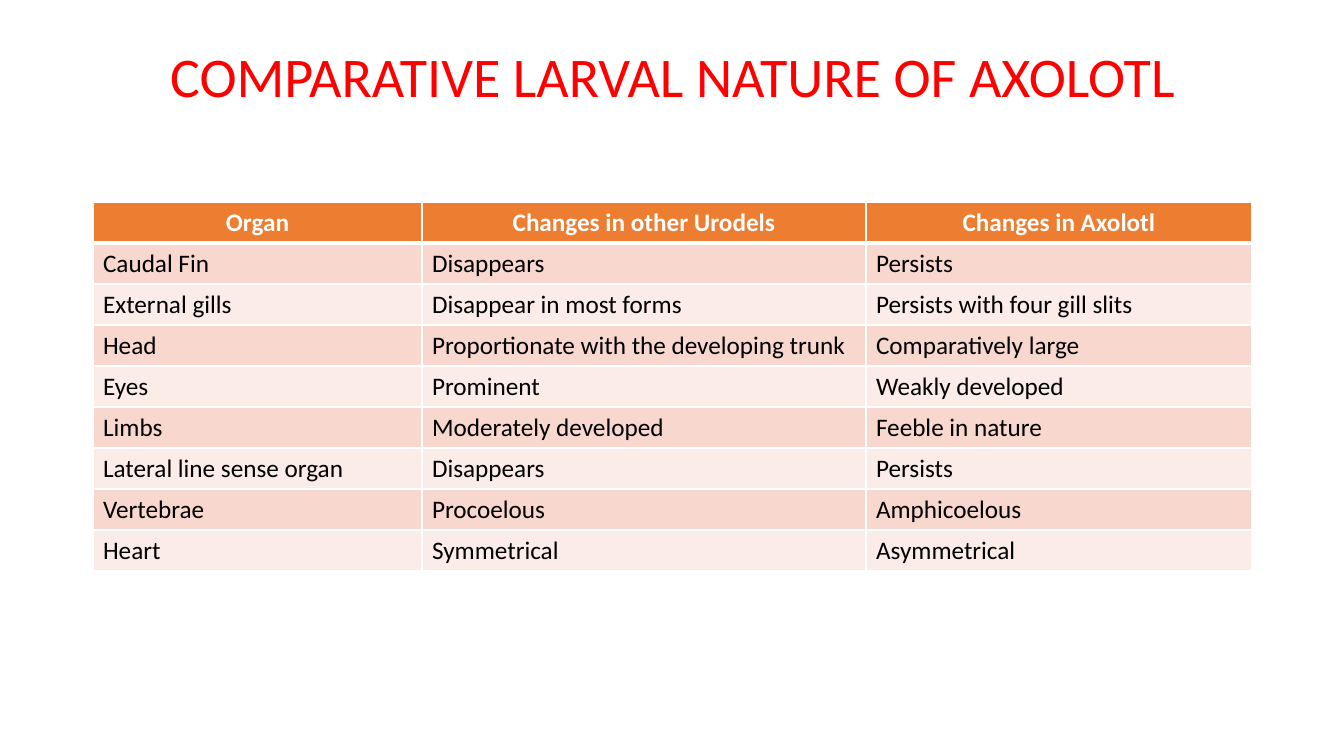
from lxml import etree
from pptx import Presentation
from pptx import util as u
from pptx.dml.color import RGBColor
from pptx.enum import text
from pptx.oxml import ns

PX = 914400 / 100.8
FONT = "Calibri"
RED = RGBColor(0xFF, 0x00, 0x00)
WHITE = RGBColor(0xFF, 0xFF, 0xFF)
BLACK = RGBColor(0x00, 0x00, 0x00)
ORANGE = RGBColor(0xED, 0x7D, 0x31)
PEACH = RGBColor(0xF8, 0xD7, 0xCE)
PALE_PEACH = RGBColor(0xFC, 0xEC, 0xE8)

COLUMN_WIDTHS = (329, 444, 386)
ROW_HEIGHT = 41
ORGAN_CHANGES = [
    ("Organ", "Changes in other Urodels", "Changes in Axolotl"),
    ("Caudal Fin", "Disappears", "Persists"),
    ("External gills", "Disappear in most forms", "Persists with four gill slits"),
    ("Head", "Proportionate with the developing trunk", "Comparatively large"),
    ("Eyes", "Prominent", "Weakly developed"),
    ("Limbs", "Moderately developed", "Feeble in nature"),
    ("Lateral line sense organ", "Disappears", "Persists"),
    ("Vertebrae", "Procoelous", "Amphicoelous"),
    ("Heart", "Symmetrical", "Asymmetrical"),
]


def px(length):
    return u.Emu(round(length * PX))


def add_run(paragraph, wording, size, color, bold=False):
    run = paragraph.add_run()
    run.text = wording
    run.font.name = FONT
    run.font.size = u.Pt(size)
    run.font.bold = bold
    run.font.color.rgb = color


def add_title(slide, left, top, width, height):
    title = slide.shapes.add_textbox(px(left), px(top), px(width), px(height))
    frame = title.text_frame
    frame.word_wrap = True
    frame.vertical_anchor = text.MSO_ANCHOR.MIDDLE
    heading = frame.paragraphs[0]
    heading.alignment = text.PP_ALIGN.CENTER
    heading.line_spacing = 0.9
    add_run(heading, "COMPARATIVE LARVAL NATURE OF AXOLOTL", 40, RED)


def set_borders(cell, **widths):
    """Draw white cell borders, with widths in points keyed by L, R, T and B."""
    properties = cell._tc.get_or_add_tcPr()
    for side, width in widths.items():
        line = etree.SubElement(properties, ns.qn(f"a:ln{side}"), w=str(u.Pt(width)))
        fill = etree.SubElement(line, ns.qn("a:solidFill"))
        etree.SubElement(fill, ns.qn("a:srgbClr"), val=str(WHITE))


def add_organ_table(slide, left, top):
    table = slide.shapes.add_table(
        len(ORGAN_CHANGES), len(COLUMN_WIDTHS), px(left), px(top),
        px(sum(COLUMN_WIDTHS)), px(ROW_HEIGHT * len(ORGAN_CHANGES))).table
    for column, width in zip(table.columns, COLUMN_WIDTHS):
        column.width = px(width)
    for row_index, organ in enumerate(ORGAN_CHANGES):
        table.rows[row_index].height = px(ROW_HEIGHT)
        is_header = row_index == 0
        band = ORANGE if is_header else PEACH if row_index % 2 else PALE_PEACH
        for column_index, wording in enumerate(organ):
            cell = table.cell(row_index, column_index)
            set_borders(cell, L=1, R=1, T=3 if row_index == 1 else 1,
                        B=3 if is_header else 1)
            cell.fill.solid()
            cell.fill.fore_color.rgb = band
            entry = cell.text_frame.paragraphs[0]
            entry.alignment = text.PP_ALIGN.CENTER if is_header else text.PP_ALIGN.LEFT
            add_run(entry, wording, 18, WHITE if is_header else BLACK, is_header)


def main():
    deck = Presentation()
    deck.slide_width, deck.slide_height = px(1344), px(756)
    slide = deck.slides.add_slide(deck.slide_layouts[6])
    add_title(slide, 93, 40, 1159, 79)
    add_organ_table(slide, 93, 202)
    deck.save("out.pptx")


if __name__ == "__main__":
    main()
